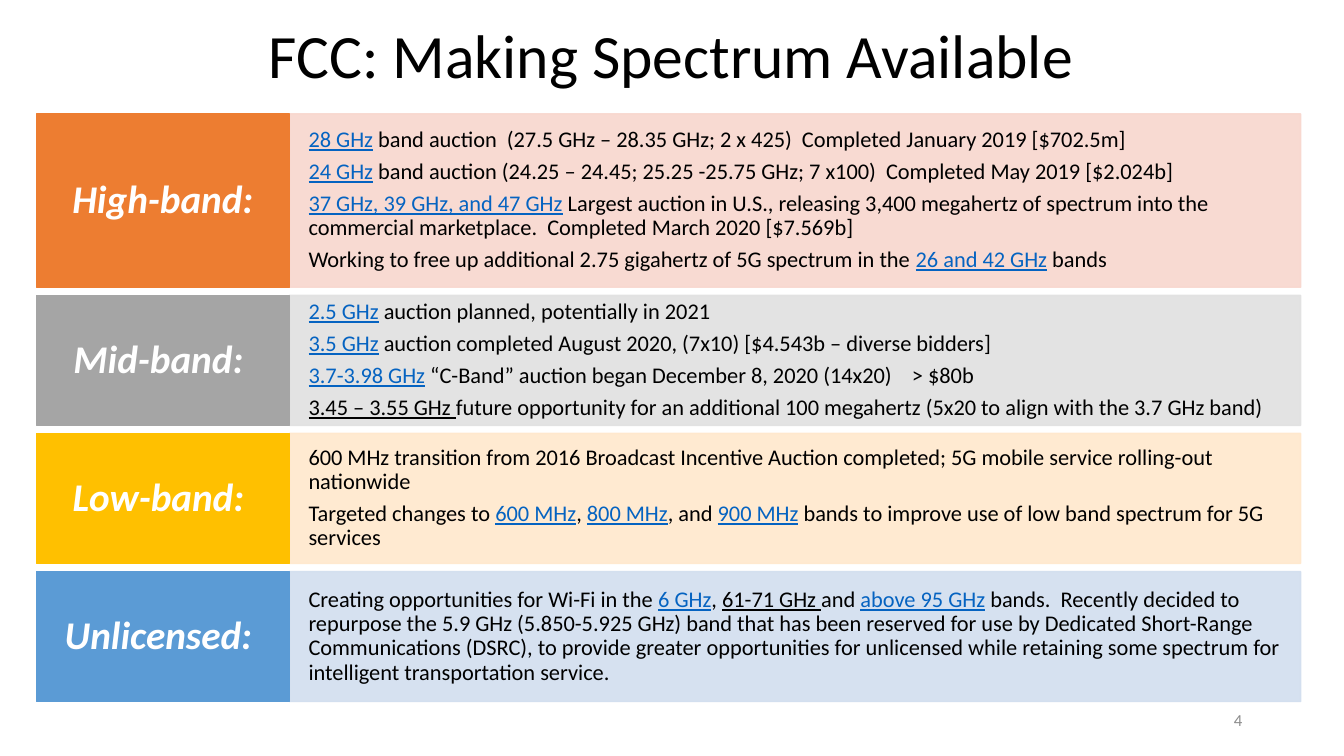
from lxml.etree import SubElement
from pptx import Presentation
from pptx.dml.color import RGBColor as RGB
from pptx.enum.shapes import MSO_SHAPE as Shape
from pptx.enum.text import MSO_ANCHOR as Anchor, PP_ALIGN as Align
from pptx.oxml.ns import qn
from pptx.util import Inches, Pt

BLACK, WHITE, GREY = RGB(0, 0, 0), RGB(255, 255, 255), RGB(0x8C, 0x8C, 0x8C)
BLUE = RGB(0x05, 0x63, 0xC1)
FONT = "Calibri"

# A run is plain text, or a pair of underlined text and its colour.
BANDS = [
    ("High-band:", 4, RGB(0xED, 0x7D, 0x31), RGB(0xF8, 0xD7, 0xCE), [
        [("28 GHz", BLUE), " band auction  (27.5 GHz – 28.35 GHz; 2 x 425)  Completed January 2019 [$702.5m]"],
        [("24 GHz", BLUE), " band auction (24.25 – 24.45; 25.25 -25.75 GHz; 7 x100)  Completed May 2019 [$2.024b]"],
        [("37 GHz, 39 GHz, and 47 GHz", BLUE),
         " Largest auction in U.S., releasing 3,400 megahertz of spectrum into the "
         "commercial marketplace.  Completed March 2020 [$7.569b]"],
        ["Working to free up additional 2.75 gigahertz of 5G spectrum in the ",
         ("26 and 42 GHz", BLUE), " bands"],
    ]),
    ("Mid-band: ", 3, RGB(0xA5, 0xA5, 0xA5), RGB(0xE1, 0xE1, 0xE1), [
        [("2.5 GHz", BLUE), " auction planned, potentially in 2021"],
        [("3.5 GHz", BLUE), " auction completed August 2020, (7x10) [$4.543b – diverse bidders]"],
        [("3.7-3.98 GHz", BLUE), " “C-Band” auction began December 8, 2020 (14x20)    > $80b"],
        [("3.45 – 3.55 GHz ", BLACK),
         "future opportunity for an additional 100 megahertz (5x20 to align with the 3.7 GHz band)"],
    ]),
    ("Low-band: ", 3, RGB(0xFF, 0xC0, 0x00), RGB(0xFF, 0xE8, 0xCC), [
        ["600 MHz transition from 2016 Broadcast Incentive Auction completed; "
         "5G mobile service rolling-out nationwide"],
        ["Targeted changes to ", ("600 MHz", BLUE), ", ", ("800 MHz", BLUE), ", and ",
         ("900 MHz", BLUE), " bands to improve use of low band spectrum for 5G services"],
    ]),
    ("Unlicensed: ", 3, RGB(0x5B, 0x9B, 0xD5), RGB(0xD2, 0xDE, 0xEF), [
        ["Creating opportunities for Wi-Fi in the ", ("6 GHz", BLUE), ", ", ("61-71 GHz ", BLACK),
         "and ", ("above 95 GHz", BLUE),
         " bands.  Recently decided to repurpose the 5.9 GHz (5.850-5.925 GHz) band that has been "
         "reserved for use by Dedicated Short-Range Communications (DSRC), to provide greater "
         "opportunities for unlicensed while retaining some spectrum for intelligent "
         "transportation service."],
    ]),
]

LEFT, TOP, UNIT, GAP = 0.36, 1.13, 0.43, 0.08
LABEL_W, BODY_W = 2.51, 10.03


def write(shape, paras, size, color, align=Align.LEFT, pad=(0.1, 0.05), bold=False):
    frame = shape.text_frame
    frame.word_wrap = True
    frame.vertical_anchor = Anchor.MIDDLE
    frame.margin_left = frame.margin_right = Inches(pad[0])
    frame.margin_top = frame.margin_bottom = Inches(pad[1])
    for i, runs in enumerate(paras):
        para = frame.paragraphs[0] if i == 0 else frame.add_paragraph()
        para.alignment = align
        para.line_spacing = 0.9
        para.space_after = Pt(size * 0.35)
        font = para.font
        font.name, font.size, font.color.rgb = FONT, Pt(size), color
        font.bold = font.italic = bold
        for item in runs:
            run = para.add_run()
            if isinstance(item, tuple):
                run.text, run.font.color.rgb = item
                run.font.underline = True
            else:
                run.text = item


def add_box(slide, x, y, w, h, color, alpha=100):
    box = slide.shapes.add_shape(Shape.RECTANGLE, *map(Inches, (x, y, w, h)))
    box.shadow.inherit = False
    box.line.width = Pt(1)
    for fill in (box.fill, box.line.fill):
        fill.solid()
        fill.fore_color.rgb = color
    if alpha < 100:
        for tint in box.element.spPr.iter(qn("a:srgbClr")):
            SubElement(tint, qn("a:alpha"), val=str(alpha * 1000))
    return box


def add_text(slide, x, y, w, h, text, size, color, align):
    box = slide.shapes.add_textbox(*map(Inches, (x, y, w, h)))
    write(box, [[text]], size, color, align)


def main():
    deck = Presentation()
    deck.slide_width, deck.slide_height = Inches(13.33), Inches(7.5)
    slide = deck.slides.add_slide(deck.slide_layouts[6])

    add_text(slide, 2.35, 0.17, 8.62, 0.83, "FCC: Making Spectrum Available", 44, BLACK, Align.CENTER)
    y = TOP
    for name, rows, dark, light, paras in BANDS:
        h = rows * UNIT
        body = add_box(slide, LEFT + LABEL_W, y, BODY_W, h, light, alpha=90)
        write(body, paras, 16, BLACK, pad=(0.19, 0.33))
        label = add_box(slide, LEFT, y, LABEL_W, h, dark)
        write(label, [[name]], 28, WHITE, Align.CENTER, (0.13, 0.13), bold=True)
        y += h + GAP
    add_text(slide, 9.42, 6.95, 3, 0.4, "4", 12, GREY, Align.RIGHT)

    deck.save("out.pptx")


if __name__ == "__main__":
    main()
